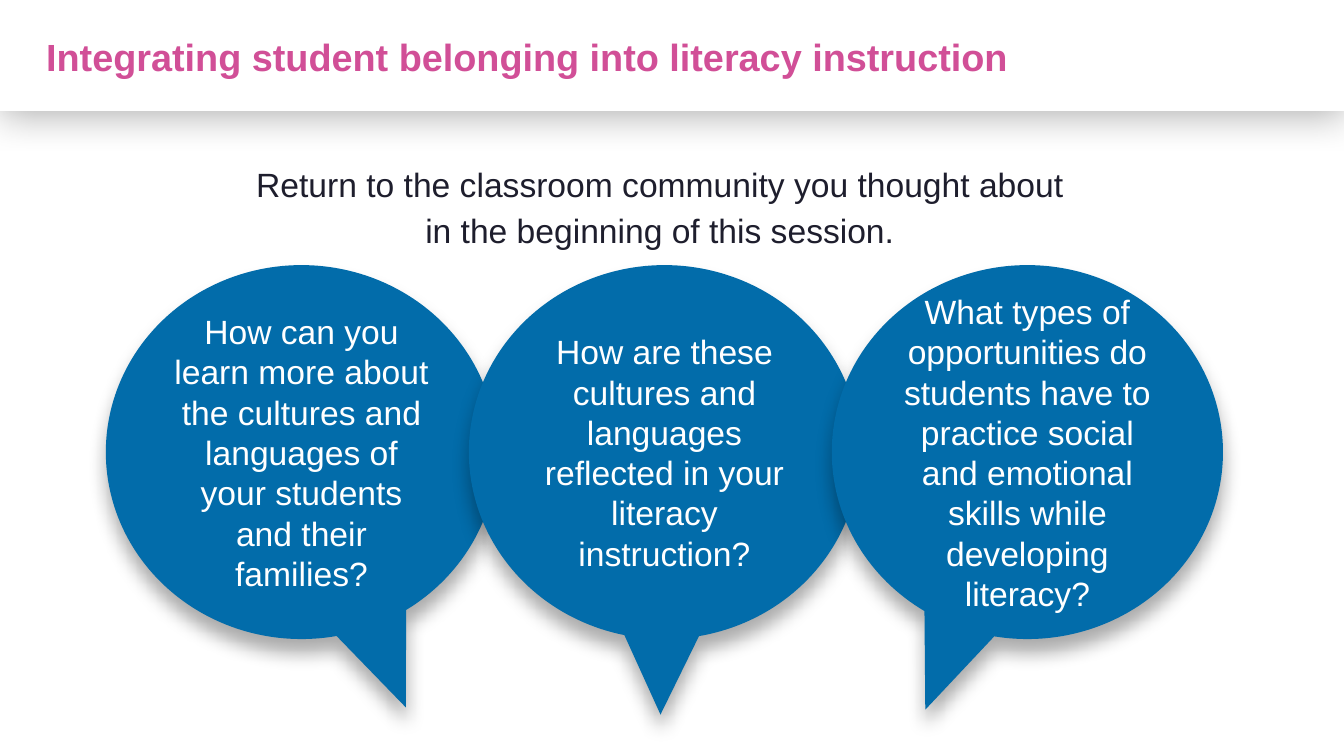
from dataclasses import dataclass

from lxml import etree
from pptx import Presentation
from pptx import util as u
from pptx.dml.color import RGBColor
from pptx.enum import shapes, text
from pptx.oxml.ns import qn

PX = 9144  # EMU per px, 100 px to the inch
FONT = "Arial"
WHITE = RGBColor(0xFF, 0xFF, 0xFF)
BLACK = RGBColor(0x00, 0x00, 0x00)
PINK = RGBColor(0xD1, 0x4F, 0x97)
INK = RGBColor(0x1E, 0x1E, 0x2D)
BLUE = RGBColor(0x02, 0x6C, 0xAA)

CALLOUT_LEFT, CALLOUT_TOP, CALLOUT_PITCH = 105, 263, 360
CALLOUT_WIDTH, CALLOUT_HEIGHT = 388, 371


@dataclass(frozen=True)
class Box:
    left: int
    top: int
    width: int
    height: int

    def emu(self) -> list[int]:
        return [side * PX for side in (self.left, self.top, self.width, self.height)]


@dataclass(frozen=True)
class Shadow:
    opacity: int  # percent
    blur: int  # points
    distance: int  # points


@dataclass(frozen=True)
class Callout:
    question: str
    tip_x: float
    tip_y: float


HEADER_SHADOW = Shadow(30, 28, 3)
CALLOUT_SHADOW = Shadow(32, 13, 10)
CALLOUTS = [
    Callout("How can you learn more about the cultures and languages of "
            "your students and their families?", 0.267, 0.683),
    Callout("How are these cultures and languages reflected in your "
            "literacy instruction?", -0.01, 0.702),
    Callout("What types of opportunities do students have to practice social "
            "and emotional skills while developing literacy?", -0.261, 0.689),
]


def add_shadow(shape, shadow: Shadow) -> None:
    """Cast a soft shadow straight down."""
    shape.shadow.inherit = False
    effects = shape._element.spPr.find(qn("a:effectLst"))
    outer = etree.SubElement(
        effects, qn("a:outerShdw"), blurRad=str(u.Pt(shadow.blur)),
        dist=str(u.Pt(shadow.distance)), dir="5400000", algn="t", rotWithShape="0")
    color = etree.SubElement(outer, qn("a:srgbClr"), val=str(BLACK))
    etree.SubElement(color, qn("a:alpha"), val=str(shadow.opacity * 1000))


def add_filled_shape(slide, kind, box: Box, fill: RGBColor, shadow: Shadow):
    shape = slide.shapes.add_shape(kind, *box.emu())
    shape.fill.solid()
    shape.fill.fore_color.rgb = fill
    shape.line.fill.background()
    add_shadow(shape, shadow)
    return shape


def write(shape, wording: str, size: int, color: RGBColor, align, anchor, bold=False):
    """Fill a shape with one wrapped paragraph and return it."""
    frame = shape.text_frame
    frame.word_wrap = True
    frame.vertical_anchor = anchor
    paragraph = frame.paragraphs[0]
    paragraph.text = wording
    paragraph.alignment = align
    for run in paragraph.runs:
        run.font.name = FONT
        run.font.size = u.Pt(size)
        run.font.bold = bold
        run.font.color.rgb = color
    return paragraph


def main() -> None:
    presentation = Presentation()
    presentation.slide_width = 1333 * PX
    presentation.slide_height = 750 * PX
    slide = presentation.slides.add_slide(presentation.slide_layouts[6])
    kinds = shapes.MSO_SHAPE
    align, anchor = text.PP_ALIGN, text.MSO_ANCHOR

    # Header band and title
    add_filled_shape(slide, kinds.RECTANGLE, Box(0, 0, 1333, 110), WHITE, HEADER_SHADOW)
    title = slide.shapes.add_textbox(*Box(36, 27, 1243, 57).emu())
    write(title, "Integrating student belonging into literacy instruction",
          27, PINK, align.LEFT, anchor.MIDDLE, bold=True)

    # Introduction
    introduction = slide.shapes.add_textbox(*Box(36, 148, 1246, 233).emu())
    introduction.text_frame.margin_top = 9 * PX
    paragraph = write(
        introduction,
        "Return to the classroom community you thought about \v"
        "in the beginning of this session. ",
        24, INK, align.CENTER, anchor.TOP)
    paragraph.line_spacing = 1.14

    # Question callouts
    for index, callout in enumerate(CALLOUTS):
        box = Box(CALLOUT_LEFT + index * CALLOUT_PITCH, CALLOUT_TOP,
                  CALLOUT_WIDTH, CALLOUT_HEIGHT)
        bubble = add_filled_shape(slide, kinds.OVAL_CALLOUT, box, BLUE, CALLOUT_SHADOW)
        bubble.adjustments[0] = callout.tip_x
        bubble.adjustments[1] = callout.tip_y
        write(bubble, callout.question, 24, WHITE, align.CENTER, anchor.MIDDLE)

    presentation.save("out.pptx")


if __name__ == "__main__":
    main()
